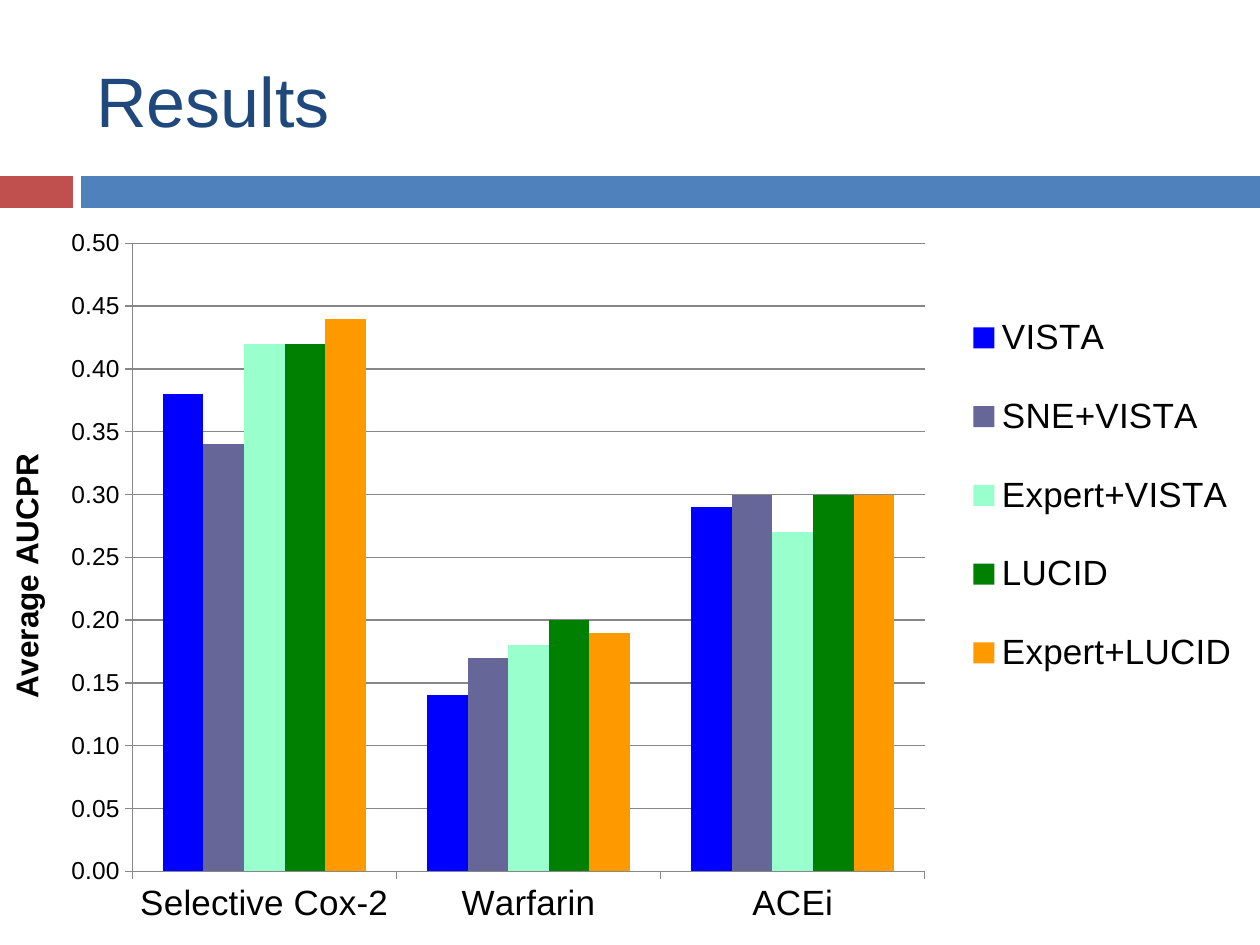
from lxml import etree
from pptx import Presentation
from pptx.chart.data import CategoryChartData
from pptx.dml.color import RGBColor
from pptx.enum.chart import XL_CHART_TYPE, XL_LEGEND_POSITION, XL_TICK_MARK
from pptx.enum.shapes import MSO_SHAPE
from pptx.enum.text import MSO_ANCHOR
from pptx.oxml.ns import qn
from pptx.util import Pt

SCALE = 914400 / 126
PAGE_WIDTH, PAGE_HEIGHT = 1260, 945
FONT = "Arial"
CLUSTERED = XL_CHART_TYPE.COLUMN_CLUSTERED
RIGHT = XL_LEGEND_POSITION.RIGHT
OUTSIDE, NO_TICK = XL_TICK_MARK.OUTSIDE, XL_TICK_MARK.NONE
RECTANGLE = MSO_SHAPE.RECTANGLE
MIDDLE = MSO_ANCHOR.MIDDLE

CATEGORIES = ["Selective Cox-2", "Warfarin", "ACEi"]
SERIES = [
    ("VISTA", "0000FF", (0.38, 0.14, 0.29)),
    ("SNE+VISTA", "666699", (0.34, 0.17, 0.30)),
    ("Expert+VISTA", "99FFCC", (0.42, 0.18, 0.27)),
    ("LUCID", "008000", (0.42, 0.20, 0.30)),
    ("Expert+LUCID", "FF9900", (0.44, 0.19, 0.30)),
]


def emu(*lengths):
    return [round(length * SCALE) for length in lengths]


def color(hex_code):
    return RGBColor.from_string(hex_code)


def apply(target, values):
    for name, value in values.items():
        setattr(target, name, value)


def style_font(font, size, hex_code="000000", bold=False):
    apply(font, {"name": FONT, "size": Pt(size), "bold": bold})
    font.color.rgb = color(hex_code)


def add_title(page, box, text):
    frame = page.shapes.add_textbox(*emu(*box)).text_frame
    apply(frame, {"word_wrap": True, "vertical_anchor": MIDDLE})
    span = frame.paragraphs[0].add_run()
    span.text = text
    style_font(span.font, 40, "1F497D")


def add_band(page, box):
    left, top, width, height = box
    accent, gap = 73, 8
    rest = accent + gap
    parts = [(left, accent, "C0504D"), (left + rest, width - rest, "4F81BD")]
    for part_left, part_width, hex_code in parts:
        bar = page.shapes.add_shape(RECTANGLE, *emu(part_left, top, part_width, height))
        bar.shadow.inherit = False
        bar.fill.solid()
        bar.fill.fore_color.rgb = color(hex_code)
        bar.line.fill.background()


def set_layout(parent, index, fractions, inner=False):
    for old in parent.findall(qn("c:layout")):
        parent.remove(old)
    layout = etree.Element(qn("c:layout"))
    manual = etree.SubElement(layout, qn("c:manualLayout"))
    settings = [("layoutTarget", "inner")] if inner else []
    settings += [("xMode", "edge"), ("yMode", "edge")]
    settings += zip("xywh", fractions)
    for name, value in settings:
        etree.SubElement(manual, qn(f"c:{name}")).set("val", str(value))
    parent.insert(index, layout)


def style_axes(chart):
    category_axis, value_axis = chart.category_axis, chart.value_axis
    for axis, size in ((category_axis, 20), (value_axis, 14)):
        apply(axis, {"major_tick_mark": OUTSIDE, "minor_tick_mark": NO_TICK})
        style_font(axis.tick_labels.font, size)
        axis.format.line.color.rgb = color("878787")
    apply(value_axis, {
        "minimum_scale": 0,
        "maximum_scale": 0.5,
        "major_unit": 0.05,
        "has_major_gridlines": True,
    })
    value_axis.major_gridlines.format.line.color.rgb = color("878787")
    apply(value_axis.tick_labels, {
        "number_format": "#,##0.00",
        "number_format_is_linked": False,
    })
    para = value_axis.axis_title.text_frame.paragraphs[0]
    span = para.add_run()
    span.text = "Average AUCPR"
    style_font(span.font, 18, bold=True)


def add_results_chart(page, box):
    data = CategoryChartData(number_format="0.00")
    data.categories = CATEGORIES
    for name, _, values in SERIES:
        data.add_series(name, values)
    chart = page.shapes.add_chart(CLUSTERED, *emu(*box), data).chart
    apply(chart, {"has_title": False, "has_legend": True})
    style_font(chart.font, 10)
    style_axes(chart)

    plot = chart.plots[0]
    apply(plot, {"gap_width": 150, "overlap": 0, "vary_by_categories": False})
    for series, (_, hex_code, _) in zip(plot.series, SERIES):
        series.format.fill.solid()
        series.format.fill.fore_color.rgb = color(hex_code)

    legend = chart.legend
    apply(legend, {"position": RIGHT, "include_in_layout": False})
    style_font(legend.font, 20)
    plot_area = chart._chartSpace.chart.plotArea
    set_layout(plot_area, 0, (0.105, 0.031, 0.629, 0.87), inner=True)
    set_layout(legend._element, 1, (0.76, 0.08, 0.23, 0.6))


def main():
    deck = Presentation()
    deck.slide_width, deck.slide_height = emu(PAGE_WIDTH, PAGE_HEIGHT)
    page = deck.slides.add_slide(deck.slide_layouts[6])
    add_band(page, (0, 176, PAGE_WIDTH, 32))
    add_title(page, (84, 32, 1124, 136), "Results")
    add_results_chart(page, (0, 221, PAGE_WIDTH, 722))
    deck.save("out.pptx")


if __name__ == "__main__":
    main()
